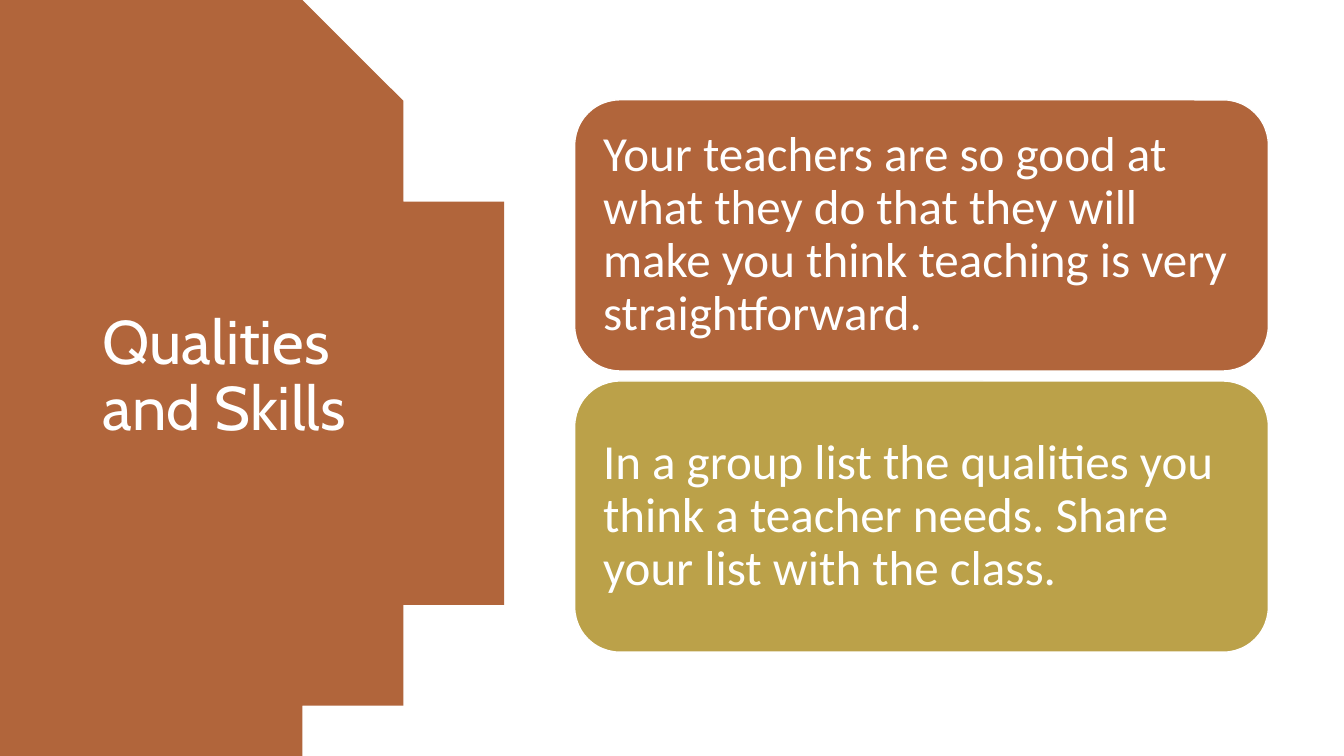
"""Build the "Qualities and Skills" slide: a round title panel beside two cards."""
from math import asin, cos, sin

from pptx import Presentation
from pptx.dml.color import RGBColor
from pptx.enum.shapes import MSO_SHAPE
from pptx.enum.text import MSO_ANCHOR, PP_ALIGN
from pptx.util import Inches, Pt

WIDTH, HEIGHT = 13.33, 7.5
COLOURS = {"white": "FFFFFF", "rust": "B1653B", "olive": "BBA149"}
PANEL_CENTRE, PANEL_RADIUS, ARC_STEPS = 0.53, 4.4, 80
CARD_LEFT, CARD_TOP, CARD_WIDTH, CARD_HEIGHT, CARD_PITCH = 5.7, 0.99, 6.88, 2.69, 2.79
CARDS = [
    ("rust", "Your teachers are so good at what they do that they will "
             "make you think teaching is very straightforward."),
    ("olive", "In a group list the qualities you think a teacher needs. "
              "Share your list with the class."),
]


def colour(name):
    return RGBColor.from_string(COLOURS[name])


def write_text(shape, text, font_name, size, inset):
    frame = shape.text_frame
    frame.word_wrap = True
    frame.vertical_anchor = MSO_ANCHOR.MIDDLE
    frame.margin_left = frame.margin_right = Inches(inset)
    frame.margin_top = frame.margin_bottom = Inches(inset)
    paragraph = frame.paragraphs[0]
    paragraph.alignment = PP_ALIGN.LEFT
    paragraph.line_spacing = 0.9
    run = paragraph.add_run()
    run.text = text
    run.font.name = font_name
    run.font.size = Pt(size)
    run.font.color.rgb = colour("white")


def paint(shape, fill_name):
    shape.shadow.inherit = False
    shape.fill.solid()
    shape.fill.fore_color.rgb = colour(fill_name)


def add_panel(slide):
    middle = HEIGHT / 2
    reach = asin(middle / PANEL_RADIUS)
    angles = [reach * (2 * step / ARC_STEPS - 1) for step in range(ARC_STEPS + 1)]
    arc = [(PANEL_CENTRE + PANEL_RADIUS * cos(angle), middle + PANEL_RADIUS * sin(angle))
           for angle in angles]
    builder = slide.shapes.build_freeform(0, 0, scale=Inches(1))
    builder.add_line_segments(arc + [(0, HEIGHT)], close=True)
    panel = builder.convert_to_shape()
    paint(panel, "rust")
    panel.line.fill.background()


def add_title(slide, text):
    title = slide.shapes.add_textbox(Inches(0.92), Inches(0.7), Inches(3.23), Inches(6.09))
    write_text(title, text, "Cabin", 44, 0.1)


def add_card(slide, row, fill_name, text):
    card = slide.shapes.add_shape(
        MSO_SHAPE.ROUNDED_RECTANGLE, Inches(CARD_LEFT), Inches(CARD_TOP + row * CARD_PITCH),
        Inches(CARD_WIDTH), Inches(CARD_HEIGHT))
    paint(card, fill_name)
    card.line.color.rgb = colour("white")
    card.line.width = Pt(1)
    write_text(card, text, "Calibri", 35, 0.15)


def main():
    presentation = Presentation()
    presentation.slide_width = Inches(WIDTH)
    presentation.slide_height = Inches(HEIGHT)
    slide = presentation.slides.add_slide(presentation.slide_layouts[6])
    add_panel(slide)
    add_title(slide, "Qualities and Skills")
    for row, (fill_name, text) in enumerate(CARDS):
        add_card(slide, row, fill_name, text)
    presentation.save("out.pptx")


if __name__ == "__main__":
    main()
